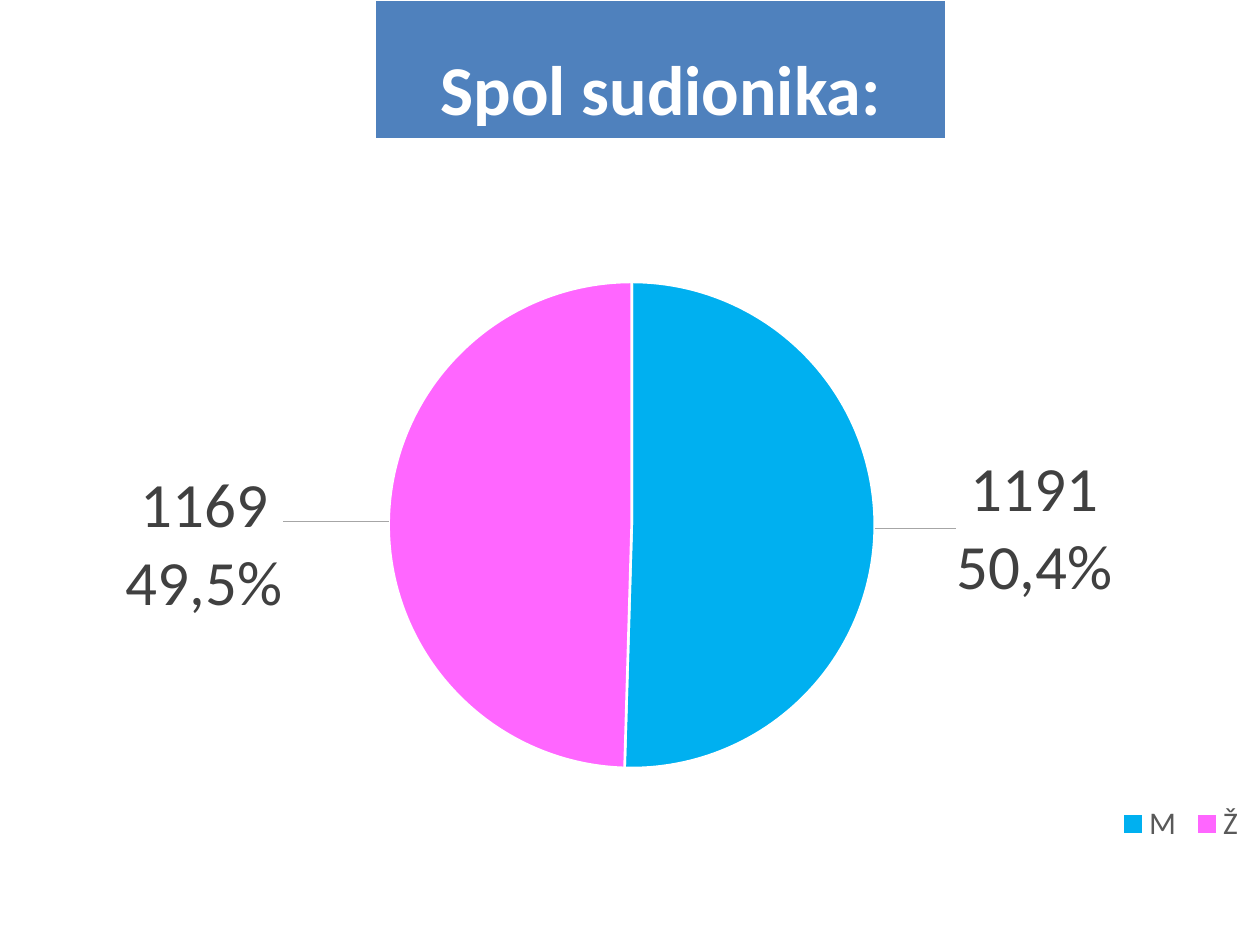
from lxml.etree import SubElement as Sub
from pptx import Presentation
from pptx.chart.data import CategoryChartData as Data
from pptx.dml.color import RGBColor as Rgb
from pptx.enum.chart import XL_CHART_TYPE as Kind, XL_LABEL_POSITION as Spot, XL_LEGEND_POSITION as Side
from pptx.enum.text import MSO_ANCHOR as Anchor, PP_ALIGN as Align
from pptx.oxml import parse_xml
from pptx.oxml.ns import nsdecls, qn
from pptx.util import Cm, Pt

HUES = {"white": "FFFFFF", "head": "4F81BD", "male": "00B0F0", "female": "FF66FF",
        "label": "404040", "key": "595959", "lead": "A6A6A6", "black": "000000"}
EDGES = {"L": 1, "R": 1, "T": 1, "B": 3}
GROUPS = [("M", 1191, "50,4%", "male", (0.06, 0)),
          ("Ž", 1169, "49,5%", "female", (-0.08, 0.04))]


def layout(inner=False, **vals):
    box = parse_xml(f"<c:layout {nsdecls('c')}><c:manualLayout/></c:layout>")
    if inner:
        Sub(box[0], qn("c:layoutTarget"), val="inner")
    if "w" in vals:
        for axis in "xy":
            Sub(box[0], qn(f"c:{axis}Mode"), val="edge")
    for name, val in vals.items():
        Sub(box[0], qn(f"c:{name}"), val=str(val))
    return box


class Deck:
    face = "Calibri"

    def __init__(self, wide, high):
        self.prs = Presentation()
        self.prs.slide_width, self.prs.slide_height = Cm(wide), Cm(high)
        self.slide = self.prs.slides.add_slide(self.prs.slide_layouts[6])

    def hue(self, name):
        return Rgb.from_string(HUES[name])

    def paint(self, fill, name):
        fill.solid()
        fill.fore_color.rgb = self.hue(name)

    def style(self, font, size, name, bold=False):
        for key, val in {"name": self.face, "size": Pt(size), "bold": bold}.items():
            setattr(font, key, val)
        font.color.rgb = self.hue(name)

    def banner(self, text, *at):
        left, top, wide, high = map(Cm, at)
        cell = self.slide.shapes.add_table(1, 1, left, top, wide, high).table.cell(0, 0)
        props = cell._tc.get_or_add_tcPr()
        for edge, width in EDGES.items():
            line = Sub(props, qn(f"a:ln{edge}"), w=str(Pt(width)))
            Sub(Sub(line, qn("a:solidFill")), qn("a:srgbClr"), val=HUES["white"])
        self.paint(cell.fill, "head")
        cell.vertical_anchor = Anchor.MIDDLE
        para = cell.text_frame.paragraphs[0]
        para.text = text
        for key, val in {"alignment": Align.CENTER, "line_spacing": 1.5}.items():
            setattr(para, key, val)
        self.style(para.runs[0].font, 40, "white", True)

    def pie(self, groups, *at):
        data = Data()
        data.categories = [group[0] for group in groups]
        data.add_series("Series 1", [group[1] for group in groups])
        chart = self.slide.shapes.add_chart(Kind.PIE, *map(Cm, at), data).chart
        chart.has_title = False
        self.style(chart.font, 10, "black")
        plot = chart.plots[0]
        plot.vary_by_categories = True
        area = chart._chartSpace.chart.plotArea
        for old in area.findall(qn("c:layout")):
            area.remove(old)
        area.insert(0, layout(True, x=0.3, y=0.03, w=0.4, h=0.83))
        self.legend(chart)
        series = plot.series[0]
        self.labels(series.data_labels)
        for num, (_, count, share, name, shift) in enumerate(groups):
            self.slice(series.points[num], f"{count}\n{share}", name, shift)

    def legend(self, chart):
        chart.has_legend = True
        legend = chart.legend
        for key, val in {"position": Side.BOTTOM, "include_in_layout": False}.items():
            setattr(legend, key, val)
        self.style(legend.font, 18, "key")
        for old in legend._element.findall(qn("c:layout")):
            legend._element.remove(old)
        spot = legend._element.find(qn("c:legendPos"))
        spot.addnext(layout(x=0.89, y=0.91, w=0.11, h=0.09))

    def labels(self, labels):
        for key, val in {"show_value": True, "position": Spot.OUTSIDE_END}.items():
            setattr(labels, key, val)
        self.style(labels.font, 36, "label")
        lead = Sub(labels._element, qn("c:leaderLines"))
        line = Sub(Sub(lead, qn("c:spPr")), qn("a:ln"), w=str(Pt(0.75)))
        Sub(Sub(line, qn("a:solidFill")), qn("a:srgbClr"), val=HUES["lead"])

    def slice(self, point, text, name, shift):
        self.paint(point.format.fill, name)
        edge = point.format.line
        edge.width = Pt(1.5)
        edge.color.rgb = self.hue("white")
        label = point.data_label
        frame = label.text_frame
        frame.text = text
        for para in frame.paragraphs:
            self.style(para.runs[0].font, 36, "label")
        label.position = Spot.OUTSIDE_END
        mark = label._get_or_add_dLbl().find(qn("c:idx"))
        mark.addnext(layout(x=shift[0], y=shift[1]))


def main():
    deck = Deck(25.4, 19.05)
    deck.banner("Spol sudionika:", 7.57, 0, 11.5, 2.79)
    deck.pie(GROUPS, 0.3, 5.33, 24.87, 11.81)
    deck.prs.save("out.pptx")


if __name__ == "__main__":
    main()
